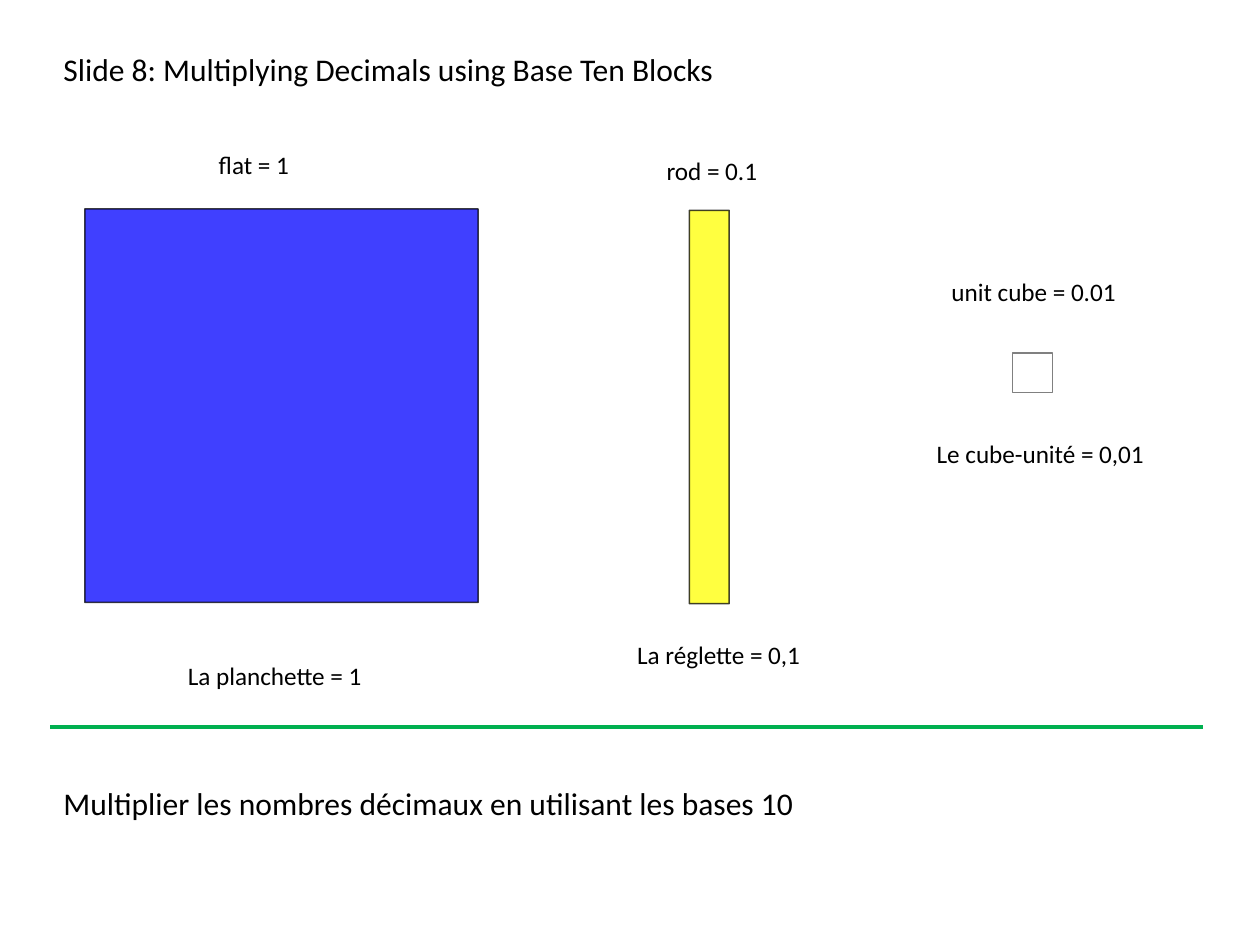
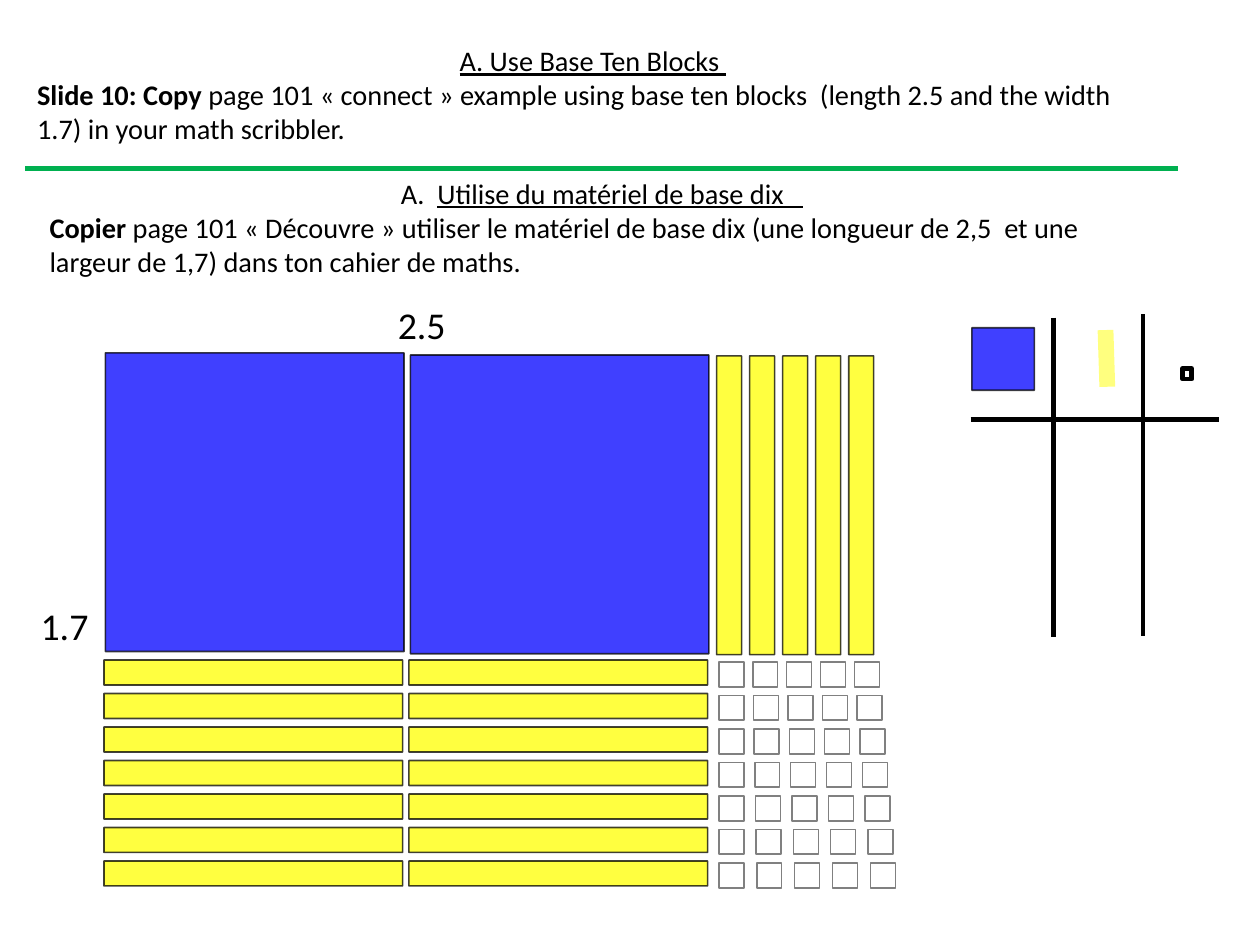
from lxml import etree
from pptx import Presentation
from pptx.dml.color import RGBColor
from pptx.enum import shapes, text
from pptx.oxml import ns
from pptx.util import Cm, Pt

FONT = "Calibri"
BLACK, WHITE, GREY = "000000", "FFFFFF", "808080"
BLUE, YELLOW, GREEN = "0000FF", "FFFF00", "00B050"
CENTER = text.PP_ALIGN.CENTER
LEFT = text.PP_ALIGN.LEFT


def rgb(code):
    return RGBColor.from_string(code)


def fade(item, part):
    """Set the opacity, in percent, of every colour of an item."""
    for tint in item._element.spPr.iter(ns.qn("a:srgbClr")):
        etree.SubElement(tint, ns.qn("a:alpha")).set("val", str(part * 1000))


class Deck:
    def __init__(self, width, height):
        self.prs = Presentation()
        self.prs.slide_width, self.prs.slide_height = Cm(width), Cm(height)
        self.slide = None

    def page(self):
        self.slide = self.prs.slides.add_slide(self.prs.slide_layouts[6])

    def block(self, left, top, width, height, fill, edge=BLACK, weight=1, alpha=75):
        box = self.slide.shapes.add_shape(
            shapes.MSO_SHAPE.RECTANGLE, Cm(left), Cm(top), Cm(width), Cm(height))
        box.shadow.inherit = False
        if fill:
            box.fill.solid()
            box.fill.fore_color.rgb = rgb(fill)
        else:
            box.fill.background()
        box.line.color.rgb = rgb(edge)
        box.line.width = Pt(weight)
        if alpha < 100:
            fade(box, alpha)

    def cube(self, left, top, size):
        self.block(left, top, size, size, WHITE, GREY, alpha=100)

    def line(self, x1, y1, x2, y2, color=BLACK, weight=3, alpha=100):
        rule = self.slide.shapes.add_connector(
            shapes.MSO_CONNECTOR.STRAIGHT, Cm(x1), Cm(y1), Cm(x2), Cm(y2))
        rule.line.color.rgb = rgb(color)
        rule.line.width = Pt(weight)
        etree.SubElement(rule._element.spPr, ns.qn("a:effectLst"))
        if alpha < 100:
            fade(rule, alpha)

    def split(self, left, top):
        """Green rule between the English and the French part."""
        self.line(left, top, left + 25.83, top, GREEN)

    def text(self, left, top, width, height, size, *paras):
        """Each paragraph is (alignment, [(words, font values), ...])."""
        box = self.slide.shapes.add_textbox(Cm(left), Cm(top), Cm(width), Cm(height))
        frame = box.text_frame
        frame.word_wrap = True
        frame.auto_size = text.MSO_AUTO_SIZE.SHAPE_TO_FIT_TEXT
        for num, (align, runs) in enumerate(paras):
            para = frame.add_paragraph() if num else frame.paragraphs[0]
            para.alignment = align
            for words, extra in runs:
                run = para.add_run()
                run.text = words
                look = {"name": FONT, "size": Pt(size), **extra}
                for key, value in look.items():
                    setattr(run.font, key, value)
                run.font.color.rgb = rgb(BLACK)

    def label(self, left, top, width, words, size=16, height=0.94):
        self.text(left, top, width, height, size, (LEFT, [(words, {})]))

    def task(self, left, top, mark, head, lead, body):
        """Centred, underlined heading above a task with a bold lead."""
        self.text(left, top, 25.25, 2.57, 18,
                  (CENTER, [(mark, {}), (head, {"underline": True})]),
                  (LEFT, [(lead, {"bold": True}), (body, {})]))


def values(deck):
    deck.page()
    # Blocks
    side, unit = 8.81, 0.89
    deck.block(1.9, 4.68, side, side, BLUE)
    deck.cube(22.68, 7.9, unit)
    deck.block(15.44, 4.71, unit, side, YELLOW)
    # Labels
    for spot in (
        (4.65, 3.23, 6.71, "flat = 1"),
        (14.68, 3.35, 7.54, "rod = 0.1"),
        (21.06, 6.07, 7.1, "unit cube = 0.01"),
        (3.96, 14.66, 14.48, "La planchette = 1"),
        (14.02, 14.2, 14.1, "La réglette = 0,1"),
        (20.73, 9.68, 7.4, "Le cube-unité = 0,01"),
    ):
        deck.label(*spot)
    # Titles
    deck.label(1.17, 0.99, 26.49,
               "Slide 8: Multiplying Decimals using Base Ten Blocks", 20, 1.12)
    deck.label(1.17, 17.42, 20.47,
               "Multiplier les nombres décimaux en utilisant les bases 10", 20, 1.12)
    deck.split(1.12, 16.28)


def product(deck):
    deck.page()
    # Tasks
    deck.task(0.58, 0.84, " ", "A. Use Base Ten Blocks ", "Slide 10: Copy",
              " page 101 « connect » example using base ten blocks  "
              "(length 2.5 and the width 1.7) in your math scribbler.")
    deck.task(0.86, 3.81, "A.  ", "Utilise du matériel de base dix   ", "Copier",
              " page 101 « Découvre » utiliser le matériel de base dix "
              "(une longueur de 2,5  et une largeur de 1,7) "
              "dans ton cahier de maths.")
    deck.split(0.56, 3.78)

    # Area model: 2.5 wide, 1.7 high
    side, unit, step = 6.69, 0.56, 0.75
    for left, top in ((2.36, 7.9), (9.19, 7.95)):
        deck.block(left, top, side, side, BLUE)
    for col in range(5):
        deck.block(16.05 + 0.74 * col, 7.97, unit, side, YELLOW)
    for row in range(7):
        for left in (2.33, 9.16):
            deck.block(left, 14.78 + step * row, side, unit, YELLOW)
        # Cubes spread a little wider in each lower row
        gap = 0.76 + 0.015 * row
        for col in range(5):
            deck.cube(16.1 + gap * col, 14.82 + step * row, unit)
    deck.label(0.66, 13.36, 2.82, "1.7", 24, 1.27)
    deck.label(8.66, 6.63, 2.74, "2.5", 24, 1.27)

    # Place value chart
    deck.block(21.77, 7.34, 1.4, 1.4, BLUE)
    deck.block(26.49, 8.25, 0.2, 0.24, None, weight=3, alpha=100)
    deck.line(24.76, 7.39, 24.8, 8.66, YELLOW, 10, 50)
    deck.line(21.74, 9.4, 27.3, 9.4)
    deck.line(25.6, 7.04, 25.6, 14.25)
    deck.line(23.6, 7.11, 23.6, 14.27)


def main():
    deck = Deck(28.22, 21.16)
    values(deck)
    product(deck)
    deck.prs.save("out.pptx")


if __name__ == "__main__":
    main()
